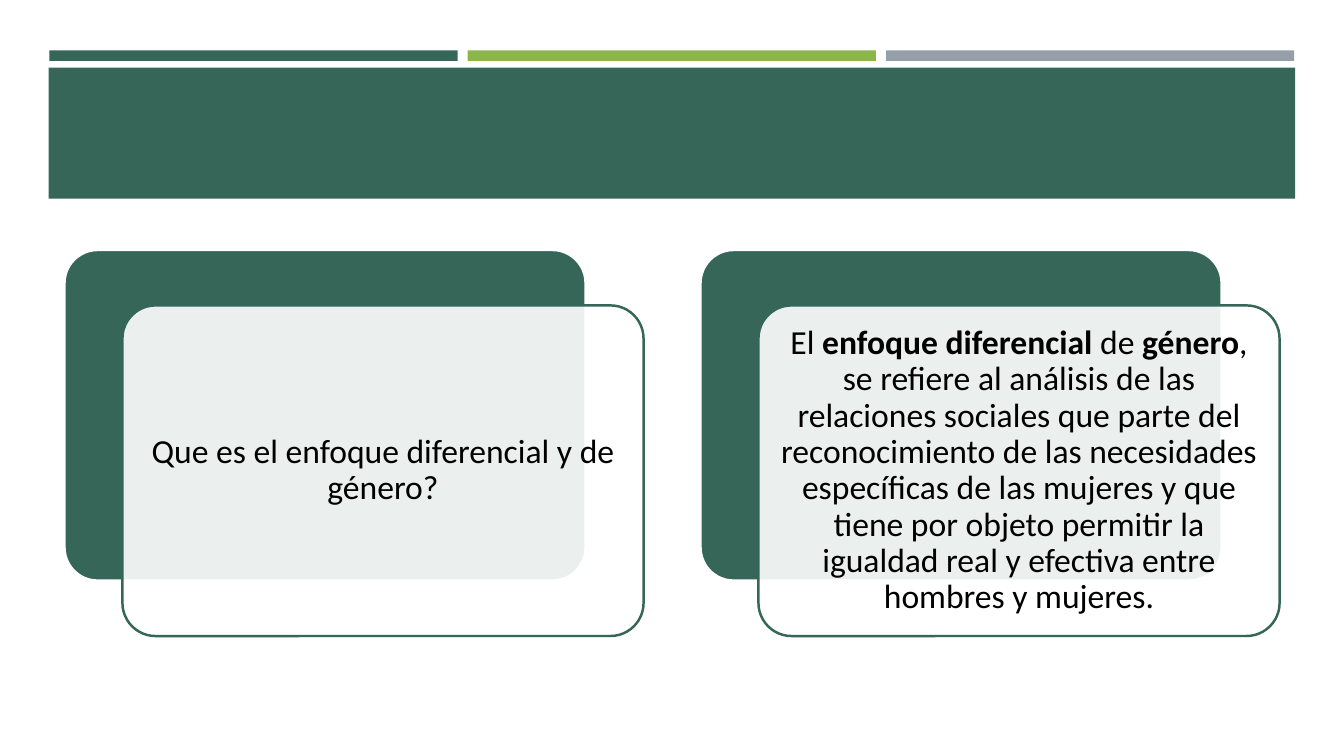
from pptx import Presentation
from pptx.dml.color import RGBColor
from pptx.enum.shapes import MSO_SHAPE as Shape
from pptx.enum.text import MSO_ANCHOR as Anchor, PP_ALIGN as Align
from pptx.oxml.ns import qn
from pptx.util import Pt
from lxml.etree import SubElement

GREEN, LIME, GREY, WHITE, BLACK = "366658", "8CB64A", "969FA7", "FFFFFF", "000000"

BLANK_LAYOUT = 6
BAR_LEFT, BAR_TOP, BAR_WIDTH, BAR_PITCH = 35.28, 36, 291.6, 298.8
CARD_WIDTH, CARD_HEIGHT = 372.24, 236.16
CARD_TOP, CARD_SHIFT_X, CARD_SHIFT_Y = 178.56, 41.4, 39.6

# Each card: left edge and its (text, bold) runs
CARDS = [
    (46.08, [("Que es el enfoque diferencial y de género?", False)]),
    (500.4, [
        ("El ", False),
        ("enfoque diferencial", True),
        (" de ", False),
        ("género", True),
        (", se refiere al análisis de las relaciones sociales que parte del "
         "reconocimiento de las necesidades específicas de las mujeres y que "
         "tiene por objeto permitir la igualdad real y efectiva entre hombres "
         "y mujeres.", False),
    ]),
]


def set_color(target, color):
    target.solid()
    target.fore_color.rgb = RGBColor.from_string(color)


def set_values(target, values):
    for name, value in values.items():
        setattr(target, name, value)


def add_block(slide, kind, left, top, width, height, fill, line=None):
    shape = slide.shapes.add_shape(kind, Pt(left), Pt(top), Pt(width), Pt(height))
    shape.shadow.inherit = False
    set_color(shape.fill, fill)
    if line:
        set_color(shape.line.fill, line)
        shape.line.width = Pt(1.75)
    else:
        shape.line.fill.background()
    return shape


def add_panel(slide, left, top, fill, line):
    panel = add_block(slide, Shape.ROUNDED_RECTANGLE, left, top,
                      CARD_WIDTH, CARD_HEIGHT, fill, line)
    panel.adjustments[0] = 0.1
    return panel


def set_opacity(shape, percent):
    color = shape.fill._xPr.find(qn("a:solidFill"))[0]
    SubElement(color, qn("a:alpha")).set("val", str(percent * 1000))


def write_text(shape, runs):
    frame = shape.text_frame
    margins = ("margin_left", "margin_top", "margin_right", "margin_bottom")
    set_values(frame, dict.fromkeys(margins, Pt(7.2)))
    set_values(frame, {"word_wrap": True, "vertical_anchor": Anchor.MIDDLE})
    paragraph = frame.paragraphs[0]
    set_values(paragraph, {"alignment": Align.CENTER, "line_spacing": 0.9})
    for text, bold in runs:
        run = paragraph.add_run()
        run.text = text
        set_values(run.font, {"name": "Calibri", "size": Pt(24), "bold": bold})
        set_color(run.font.fill, BLACK)


def add_card(slide, left, runs):
    add_panel(slide, left, CARD_TOP, GREEN, WHITE)
    front = add_panel(slide, left + CARD_SHIFT_X, CARD_TOP + CARD_SHIFT_Y, WHITE, GREEN)
    set_opacity(front, 90)
    write_text(front, runs)


def main():
    presentation = Presentation()
    set_values(presentation, {"slide_width": Pt(960), "slide_height": Pt(540)})
    slide = presentation.slides.add_slide(presentation.slide_layouts[BLANK_LAYOUT])

    # Header: three thin bars above a wide band
    for index, color in enumerate((GREEN, LIME, GREY)):
        add_block(slide, Shape.RECTANGLE, BAR_LEFT + index * BAR_PITCH, BAR_TOP,
                  BAR_WIDTH, 7.5, color)
    add_block(slide, Shape.RECTANGLE, 34.8, 48.3, 890.4, 93.6, GREEN)

    # Question and answer cards
    for left, runs in CARDS:
        add_card(slide, left, runs)

    presentation.save("out.pptx")


if __name__ == "__main__":
    main()
